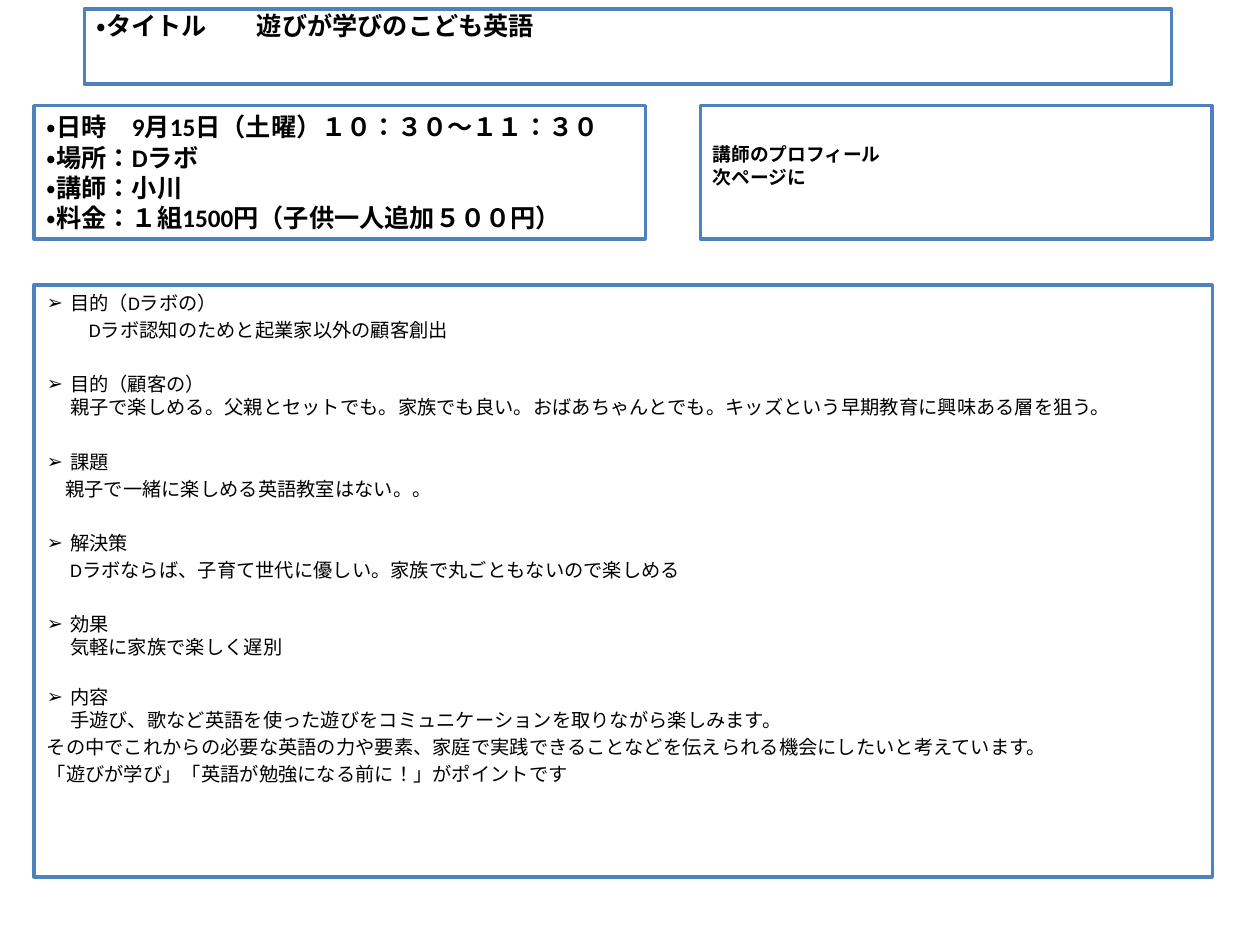
from dataclasses import dataclass

from lxml.etree import SubElement
from pptx import Presentation
from pptx.dml.color import RGBColor
from pptx.enum.lang import MSO_LANGUAGE_ID as Lang
from pptx.enum.shapes import MSO_SHAPE
from pptx.enum.text import MSO_ANCHOR as Anchor, MSO_AUTO_SIZE as AutoSize, PP_ALIGN as Align
from pptx.oxml.ns import qn
from pptx.util import Cm, Pt

COLORS = {"fill": "FFFFFF", "border": "4F81BD", "text": "000000"}
FONT = "Calibri"
HANG = 0.47  # cm, width of a bullet
LINE_GAP = 2.2
SECTION_GAP = 17.8


@dataclass
class Box:
    left: float
    top: float
    width: float
    height: float


@dataclass
class Line:
    text: str
    indent: float = HANG
    before: float = LINE_GAP


@dataclass
class Section:
    heading: str
    lines: list[Line]
    before: float = SECTION_GAP


TITLE_BOX = Box(1.7, 0.18, 21.92, 1.52)
DETAILS_BOX = Box(0.69, 2.13, 12.32, 2.69)
PROFILE_BOX = Box(14.12, 2.13, 10.31, 2.69)
PLAN_BOX = Box(0.69, 5.74, 23.75, 11.94)

DETAILS = [
    "・日時　9月15日（土曜）１０：３０〜１１：３０",
    "・場所：Dラボ",
    "・講師：小川",
    "・料金：１組1500円（子供一人追加５００円）",
]
PROFILE = ["講師のプロフィール", "次ページに"]
PLAN = [
    Section("目的（Dラボの）", [Line("Dラボ認知のためと起業家以外の顧客創出", 0.85)], 0),
    Section("目的（顧客の）", [Line(
        "親子で楽しめる。父親とセットでも。家族でも良い。おばあちゃんとでも。"
        "キッズという早期教育に興味ある層を狙う。", before=0)]),
    Section("課題", [Line("親子で一緒に楽しめる英語教室はない。。", 0.37)]),
    Section("解決策", [Line("Dラボならば、子育て世代に優しい。家族で丸ごともないので楽しめる")]),
    Section("効果", [Line("気軽に家族で楽しく遅別", before=0)]),
    Section("内容", [
        Line("手遊び、歌など英語を使った遊びをコミュニケーションを取りながら楽しみます。", before=0),
        Line("その中でこれからの必要な英語の力や要素、家庭で実践できることなどを"
             "伝えられる機会にしたいと考えています。", 0),
        Line("「遊びが学び」「英語が勉強になる前に！」がポイントです", 0),
    ], 15.4),
]


def frame(s, box: Box, anchor: Anchor, *, top: float = 0.13, bottom: float = 0.13,
          right: float = 0.25):
    """Place and outline a shape, and return its text frame with the given insets."""
    s.left, s.top, s.width, s.height = map(Cm, (box.left, box.top, box.width, box.height))
    s.fill.solid()
    s.fill.fore_color.rgb = RGBColor.from_string(COLORS["fill"])
    s.line.color.rgb = RGBColor.from_string(COLORS["border"])
    s.line.width = Pt(2)
    tf = s.text_frame
    tf.word_wrap = True
    tf.auto_size = AutoSize.NONE
    tf.vertical_anchor = anchor
    tf.margin_top, tf.margin_bottom, tf.margin_right = Cm(top), Cm(bottom), Cm(right)
    return tf


def add_text(tf, text: str, *, size: float, bold: bool = False, indent: float = 0,
             hanging: bool = False, before: float = 0, bullet: str = "") -> None:
    """Append a paragraph, or fill the first one while it is still empty."""
    p = tf.paragraphs[0] if not tf.text else tf.add_paragraph()
    pPr = p._p.get_or_add_pPr()
    pPr.set("marL", str(Cm(indent)))
    pPr.set("indent", str(-Cm(indent) if hanging else 0))
    if bullet:
        SubElement(pPr, qn("a:buFont"), typeface=FONT)
        SubElement(pPr, qn("a:buChar"), char=bullet)
    else:
        SubElement(pPr, qn("a:buNone"))
    p.alignment = Align.LEFT
    p.space_before = Pt(before)
    r = p.add_run()
    r.text = text
    r.font.name = FONT
    r.font.size = Pt(size)
    r.font.bold = bold
    r.font.language_id = Lang.JAPANESE
    r.font.color.rgb = RGBColor.from_string(COLORS["text"])


def add_box(slide, box: Box):
    s = slide.shapes.add_shape(
        MSO_SHAPE.RECTANGLE, Cm(box.left), Cm(box.top), Cm(box.width), Cm(box.height))
    s.shadow.inherit = False
    return s


def add_plan(tf, sections: list[Section]) -> None:
    for section in sections:
        add_text(tf, section.heading, size=11, indent=HANG, hanging=True,
                 before=section.before, bullet="➢")
        for line in section.lines:
            add_text(tf, line.text, size=11, indent=line.indent, before=line.before)


def main() -> None:
    prs = Presentation()
    prs.slide_width, prs.slide_height = Cm(25.4), Cm(19.05)
    slide = prs.slides.add_slide(prs.slide_layouts[1])

    details = frame(slide.shapes.title, DETAILS_BOX, Anchor.BOTTOM, right=0)
    for text in DETAILS:
        add_text(details, text, size=14.4, bold=True)

    add_plan(frame(slide.placeholders[1], PLAN_BOX, Anchor.TOP), PLAN)

    heading = frame(add_box(slide, TITLE_BOX), TITLE_BOX, Anchor.TOP, top=0.03)
    add_text(heading, "・タイトル\t遊びが学びのこども英語", size=14.4, bold=True,
             indent=3.23, hanging=True)

    profile = frame(add_box(slide, PROFILE_BOX), PROFILE_BOX, Anchor.BOTTOM, bottom=1.03)
    for text in PROFILE:
        add_text(profile, text, size=10.7, bold=True)

    prs.save("out.pptx")


if __name__ == "__main__":
    main()
